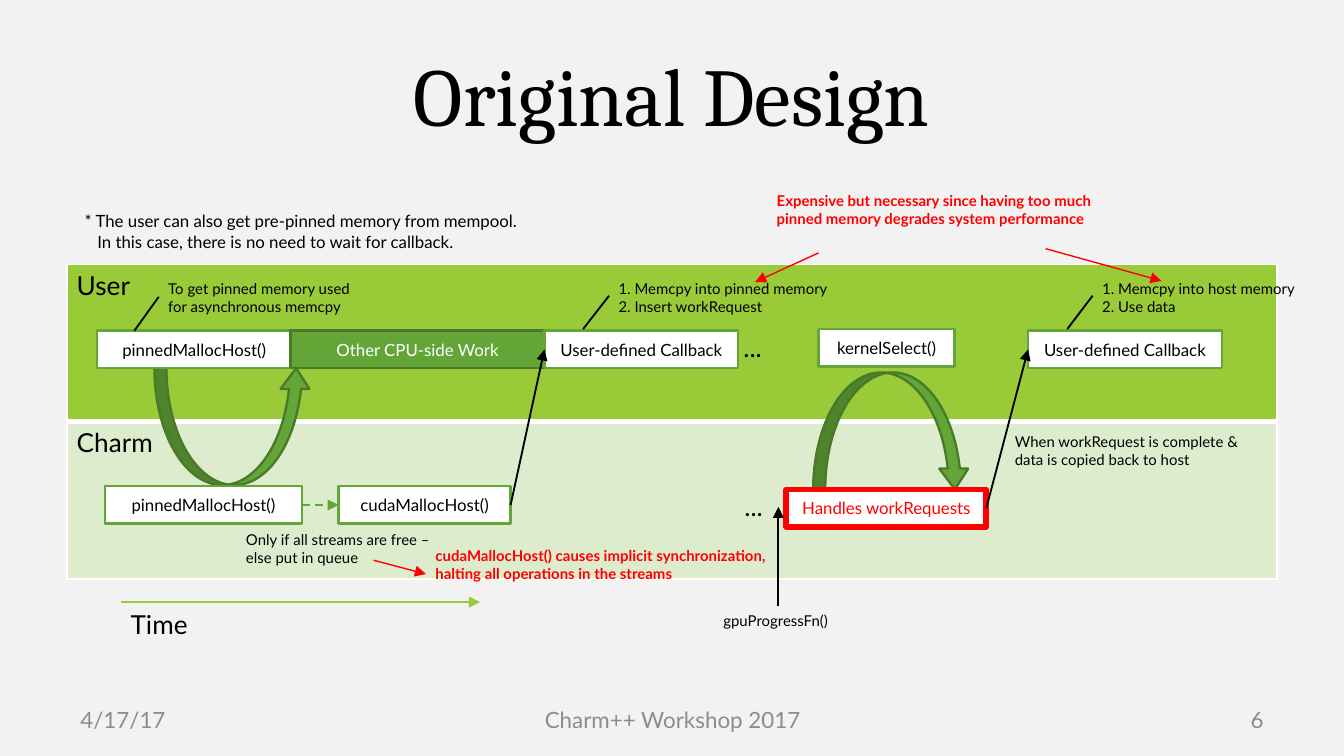
import pptx
import pptx.util
import pptx.dml.color
import pptx.enum.dml
import pptx.enum.shapes
import pptx.enum.text
import pptx.oxml
import pptx.oxml.ns
from lxml import etree

Cm = pptx.util.Cm
Pt = pptx.util.Pt
RGBColor = pptx.dml.color.RGBColor
Align = pptx.enum.text.PP_ALIGN
Anchor = pptx.enum.text.MSO_ANCHOR
Shape = pptx.enum.shapes.MSO_SHAPE
qn = pptx.oxml.ns.qn

BLACK = RGBColor(0x00, 0x00, 0x00)
WHITE = RGBColor(0xFF, 0xFF, 0xFF)
RED = RGBColor(0xFF, 0x00, 0x00)
GRAY = RGBColor(0x8C, 0x8C, 0x8C)
PAPER = RGBColor(0xF2, 0xF2, 0xF2)
LIME = RGBColor(0x99, 0xCB, 0x38)
PALE = RGBColor(0xDE, 0xEC, 0xCE)
GREEN = RGBColor(0x63, 0xA5, 0x37)
DARK = RGBColor(0x49, 0x7A, 0x29)


def write(frame, text, size, color, align=Align.LEFT, bold=False, font="Lato"):
    frame.word_wrap = True
    frame.text = text
    for par in frame.paragraphs:
        par.alignment = align
        par.font.name = font
        par.font.size = Pt(size)
        par.font.bold = bold
        par.font.color.rgb = color


def wire(start, end, color, width, head=True):
    line = slide.shapes.add_connector(
        pptx.enum.shapes.MSO_CONNECTOR.STRAIGHT, *map(Cm, start + end))
    line.line.color.rgb = color
    line.line.width = Pt(width)
    if head:
        etree.SubElement(line.line._get_or_add_ln(), qn("a:tailEnd"), type="triangle")
    etree.SubElement(line._element.spPr, qn("a:effectLst"))
    return line


deck = pptx.Presentation()
deck.slide_width, deck.slide_height = Cm(25.4), Cm(14.29)
slide = deck.slides.add_slide(deck.slide_layouts[5])
slide.background.fill.solid()
slide.background.fill.fore_color.rgb = PAPER

title = slide.shapes.title
title.left, title.top, title.width, title.height = Cm(1.27), Cm(0.58), Cm(22.86), Cm(2.39)
write(title.text_frame, "Original Design", 44, BLACK, Align.CENTER, font="Cambria")
title.text_frame.vertical_anchor = Anchor.MIDDLE

table = slide.shapes.add_table(2, 1, Cm(1.27), Cm(5), Cm(22.86), Cm(5.94)).table
table.first_row = table.horz_banding = False
lanes = [("User", LIME, 1, 3), ("Charm", PALE, 3, 1)]
for row, (name, fill, top, base) in enumerate(lanes):
    cell = table.cell(row, 0)
    write(cell.text_frame, name, 14, BLACK)
    cell.margin_left = cell.margin_right = Cm(0.18)
    cell.margin_top = cell.margin_bottom = Cm(0.1)
    props = cell._tc.get_or_add_tcPr()
    for side, width in (("L", 1), ("R", 1), ("T", top), ("B", base)):
        edge = etree.SubElement(props, qn("a:ln" + side), w=str(Pt(width)))
        paint = etree.SubElement(edge, qn("a:solidFill"))
        etree.SubElement(paint, qn("a:srgbClr"), val=str(WHITE))
    cell.fill.solid()
    cell.fill.fore_color.rgb = fill

for left, top, turned in [(2.92, 6.96, False), (15.37, 7.04, True)]:
    curve = slide.shapes.add_shape(
        Shape.CURVED_UP_ARROW, Cm(left), Cm(top), Cm(2.95), Cm(2.21))
    curve.shadow.inherit = False
    for place, value in enumerate((0.103, 0.247, 0.178)):
        curve.adjustments[place] = value
    curve.fill.solid()
    curve.fill.fore_color.rgb = GREEN
    curve.line.color.rgb = DARK
    curve.line.width = Pt(1.25)
    if turned:
        curve.rotation = 180
        curve._element.spPr.find(qn("a:xfrm")).set("flipH", "1")

steps = [
    ("pinnedMallocHost()", 1.83, 6.25, 3.68, WHITE, GREEN, 1.25, BLACK),
    ("Other CPU-side Work", 5.49, 6.25, 4.8, GREEN, DARK, 1.25, WHITE),
    ("User-defined Callback", 10.29, 6.25, 3.66, WHITE, GREEN, 1.25, BLACK),
    ("kernelSelect()", 15.47, 6.22, 2.57, WHITE, GREEN, 1.25, BLACK),
    ("User-defined Callback", 19.43, 6.25, 3.66, WHITE, GREEN, 1.25, BLACK),
    ("pinnedMallocHost()", 1.98, 9.19, 3.73, WHITE, GREEN, 1.25, BLACK),
    ("cudaMallocHost()", 6.4, 9.19, 3.25, WHITE, GREEN, 1.25, BLACK),
    ("Handles workRequests", 14.86, 9.25, 3.78, WHITE, RED, 3, RED),
]
boxes = []
for text, left, top, width, fill, edge, weight, ink in steps:
    box = slide.shapes.add_shape(Shape.RECTANGLE, Cm(left), Cm(top), Cm(width), Cm(0.71))
    box.shadow.inherit = False
    box.fill.solid()
    box.fill.fore_color.rgb = fill
    box.line.color.rgb = edge
    box.line.width = Pt(weight)
    frame = box.text_frame
    frame.margin_left = frame.margin_right = Cm(0.18)
    frame.margin_top = frame.margin_bottom = Cm(0.1)
    frame.vertical_anchor = Anchor.MIDDLE
    write(frame, text, 9, ink, Align.CENTER)
    boxes.append(box)
call, last, pinned, cuda, handler = boxes[2], boxes[4], boxes[5], boxes[6], boxes[7]

for source, target, color in [(pinned, cuda, GREEN), (cuda, call, BLACK), (handler, last, BLACK)]:
    link = wire((0, 0), (1, 1), color, 1)
    link.begin_connect(source, 3)
    link.end_connect(target, 1)
    if source is pinned:
        link.line.dash_style = pptx.enum.dml.MSO_LINE.DASH

for start, end in [((2.54, 6.25), (3, 5.61)),
                   ((11.02, 6.22), (11.51, 5.59)),
                   ((20.17, 6.22), (20.65, 5.59))]:
    wire(start, end, BLACK, 1, head=False)
for start, end in [((7.06, 10.59), (8.05, 10.85)),
                   ((15.47, 4.78), (14.27, 5.33)),
                   ((19.76, 4.7), (21.95, 5.31))]:
    wire(start, end, RED, 0.75)
wire((2.29, 11.38), (9.07, 11.38), LIME, 1)
wire((14.71, 11.46), (14.71, 9.58), BLACK, 1)

notes = [
    ("* The user can also get pre-pinned memory from mempool.\n"
     "In this case, there is no need to wait for callback.", 1.42, 3.89, 8.94, 0.97, 9, BLACK),
    ("To get pinned memory used for asynchronous memcpy", 3, 5.18, 4.14, 0.89, 8, BLACK),
    ("1. Memcpy into pinned memory\n2. Insert workRequest", 11.51, 5.18, 4.65, 0.89, 8, BLACK),
    ("1. Memcpy into host memory\n2. Use data", 20.65, 5.18, 4.11, 0.89, 8, BLACK),
    ("When workRequest is complete & data is copied back to host",
     19, 8.08, 4.85, 0.89, 8, BLACK),
    ("Only if all streams are free – else put in queue", 4.47, 9.93, 3.86, 0.89, 8, BLACK),
    ("gpuProgressFn()", 13.49, 11.46, 2.67, 0.53, 8, BLACK),
    ("Time", 2.29, 11.4, 1.52, 0.81, 14, BLACK),
    ("...", 13.87, 6.15, 0.81, 0.81, 14, BLACK),
    ("...", 13.89, 9.17, 0.81, 0.81, 14, BLACK),
    ("cudaMallocHost() causes implicit synchronization, halting all operations in the streams",
     8.05, 10.24, 6.65, 1.24, 8, RED),
    ("Expensive but necessary since having too much pinned memory degrades system performance",
     14.5, 3.53, 6.58, 1.22, 8, RED),
]
for text, left, top, width, height, size, ink in notes:
    frame = slide.shapes.add_textbox(Cm(left), Cm(top), Cm(width), Cm(height)).text_frame
    frame.margin_left = frame.margin_right = Cm(0.18)
    frame.margin_top = frame.margin_bottom = Cm(0.1)
    write(frame, text, size, ink, bold=ink == RED)
    if text == "...":
        frame.vertical_anchor = Anchor.MIDDLE
    if text.startswith("*"):
        frame.paragraphs[1]._p.get_or_add_pPr().set("marL", str(Cm(0.24)))

for text, left, width, align in [("4/17/17", 1.27, 5.92, Align.LEFT),
                                 ("Charm++ Workshop 2017", 8.69, 8.05, Align.CENTER),
                                 ("6", 18.21, 5.92, Align.RIGHT)]:
    frame = slide.shapes.add_textbox(Cm(left), Cm(13.23), Cm(width), Cm(0.76)).text_frame
    frame.vertical_anchor = Anchor.MIDDLE
    write(frame, text, 12, GRAY, align)

deck.save("out.pptx")
